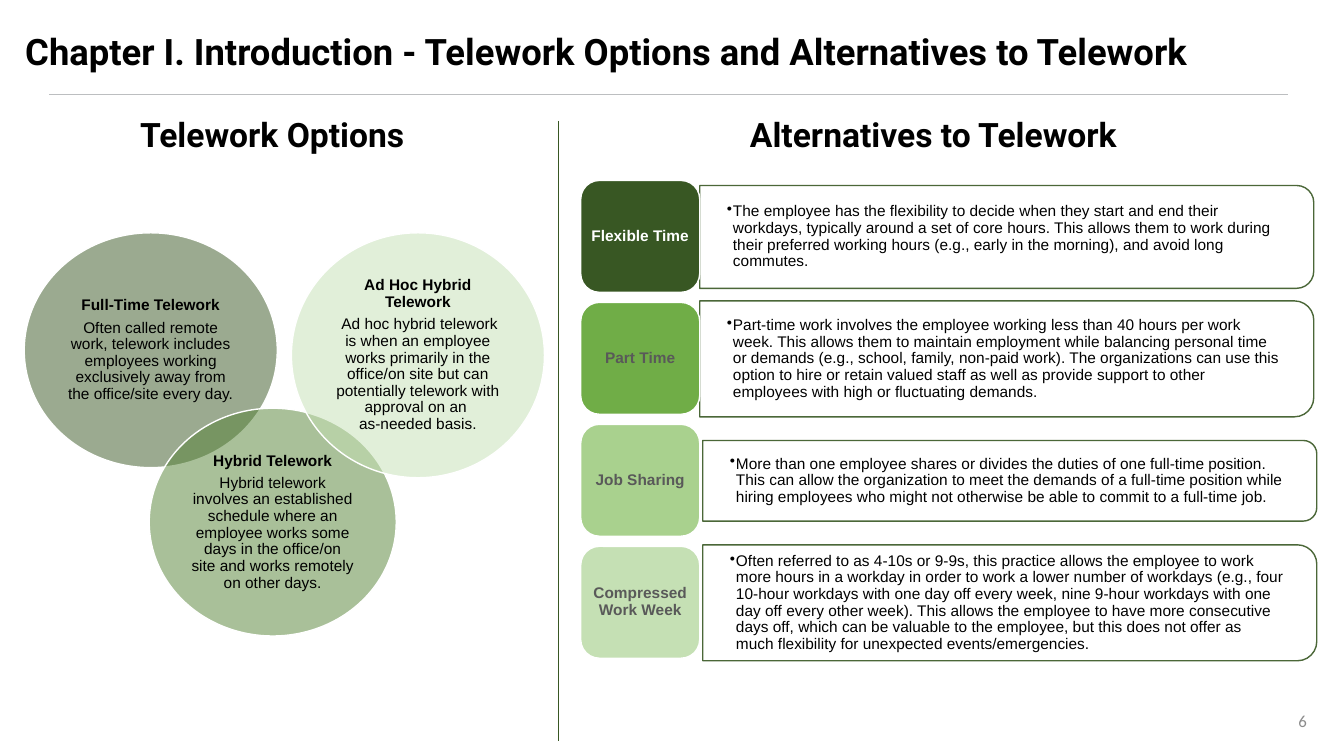
from copy import deepcopy

from lxml import etree
from pptx import Presentation
from pptx.dml.color import RGBColor
from pptx.enum import shapes, text
from pptx.oxml.ns import qn
from pptx.util import Inches, Pt

KIND = shapes.MSO_SHAPE
ALIGN = text.PP_ALIGN
MID = text.MSO_ANCHOR.MIDDLE
HEAD = {"name": "Roboto", "bold": True}
BODY = {"name": "Arial", "size": Pt(11)}
BOLD = {**BODY, "bold": True}
TIGHT = {"line_spacing": 0.9, "space_after": Pt(4), "alignment": ALIGN.CENTER}
POINT = {"line_spacing": 0.9, "space_after": Pt(2), "level": 1}

CIRCLES = [
    (0.24, 2.31, 2.51, 2.33, "385723", "Full-Time Telework",
     "Often called remote work, telework includes employees working "
     "exclusively away from the office/site every day."),
    (1.48, 4.05, 2.45, 2.26, "548235", "Hybrid Telework",
     "Hybrid telework involves an established schedule where an employee "
     "works some days in the office/on site and works remotely on other days."),
    (2.89, 2.31, 2.51, 2.43, "C5E0B4", "Ad Hoc Hybrid Telework",
     " Ad hoc hybrid telework is when an employee works primarily in the "
     "office/on site but can potentially telework with approval on an "
     "\vas-needed basis."),
]

ROWS = [
    ("Flexible Time", "385723", "FFFFFF", 6.94, 1.02,
     "The employee has the flexibility to decide when they start and end "
     "their workdays, typically around a set of core hours. This allows them "
     "to work during their preferred working hours (e.g., early in the "
     "morning), and avoid long commutes."),
    ("Part Time", "70AD47", "595959", 6.94, 1.15,
     "Part-time work involves the employee working less than 40 hours per "
     "work week. This allows them to maintain employment while balancing "
     "personal time or demands (e.g., school, family, non-paid work). The "
     "organizations can use this option to hire or retain valued staff as "
     "well as provide support to other employees with high or fluctuating "
     "demands."),
    ("Job Sharing", "A9D18E", "595959", 6.97, 0.8,
     "More than one employee shares or divides the duties of one full-time "
     "position. This can allow the organization to meet the demands of a "
     "full-time position while hiring employees who might not otherwise be "
     "able to commit to a full-time job."),
    ("Compressed Work Week", "C5E0B4", "595959", 6.97, 1.15,
     "Often referred to as 4-10s or 9-9s, this practice allows the employee "
     "to work more hours in a workday in order to work a lower number of "
     "workdays (e.g., four 10-hour workdays with one day off every week, nine "
     "9-hour workdays with one day off every other week). This allows the "
     "employee to have more consecutive days off, which can be valuable to "
     "the employee, but this does not offer as much flexibility for "
     "unexpected events/emergencies."),
]


def paint(fmt, color, alpha=100):
    """Give a fill a solid colour with an opacity in percent."""
    fmt.solid()
    fmt.fore_color.rgb = RGBColor.from_string(color)
    if alpha < 100:
        tint = fmt._xPr.find(qn("a:solidFill"))[0]
        etree.SubElement(tint, qn("a:alpha"), val=str(alpha * 1000))


def apply(item, values):
    """Set every attribute named in a dict of format values."""
    for name, value in values.items():
        setattr(item, name, value)


def frame(shape, pad=(0.1, 0.05), **values):
    """Set wrap, side and top margins, and further frame values."""
    side, top = map(Inches, pad)
    apply(shape.text_frame, {
        "word_wrap": True, "margin_left": side, "margin_right": side,
        "margin_top": top, "margin_bottom": top, **values})


def write(par, words, font, color="000000", **values):
    """Fill a paragraph with words in one font and colour."""
    par.text = words
    apply(par, values)
    for run in par.runs:
        apply(run.font, font)
        paint(run.font.fill, color)
    for gap in par._p.findall(qn("a:br")):
        gap.append(deepcopy(par.runs[0]._r.rPr))


def label(slide, box, words, font, color="000000", pad=(0.1, 0.05),
          anchor=None, **values):
    """Add a text box with one paragraph and return the paragraph."""
    shape = slide.shapes.add_textbox(*map(Inches, box))
    frame(shape, pad, vertical_anchor=anchor)
    par = shape.text_frame.paragraphs[0]
    write(par, words, font, color, **values)
    return par


def block(slide, kind, box, fill, alpha, line, edge=100):
    """Add a filled and outlined preset shape."""
    shape = slide.shapes.add_shape(kind, *map(Inches, box))
    shape.shadow.inherit = False
    paint(shape.fill, fill, alpha)
    paint(shape.line.fill, line, edge)
    shape.line.width = Pt(1)
    return shape


def rule(slide, ends, color):
    """Add a thin straight line."""
    line = slide.shapes.add_connector(
        shapes.MSO_CONNECTOR.STRAIGHT, *map(Inches, ends))
    paint(line.line.fill, color)
    line.line.width = Pt(0.5)
    etree.SubElement(line._element.spPr, qn("a:effectLst"))


def circle(slide, left, top, wide, high, color, name, words):
    """Add a see-through circle with a heading and a description."""
    shape = block(slide, KIND.OVAL, (left, top, wide, high), color, 50, "FFFFFF")
    frame(shape, (0.05, 0.05), vertical_anchor=MID)
    write(shape.text_frame.paragraphs[0], name, BOLD, **TIGHT)
    write(shape.text_frame.add_paragraph(), words, BODY, **TIGHT)


def option(slide, mid, name, color, ink, left, high, words):
    """Add one row: a panel with a bulleted text and a name tile."""
    wide = 6.09
    turned = (left + (wide - high) / 2, mid - wide / 2, high, wide)
    panel = block(slide, KIND.ROUND_2_SAME_RECTANGLE, turned,
                  "FFFFFF", 90, "385723", 90)
    panel.rotation = 90
    par = label(slide, (left, mid - high / 2, 6.04, high), words, BODY,
                pad=(0.27, 0.05), anchor=MID, **POINT)
    props = par._p.get_or_add_pPr()
    props.set("marL", str(Inches(0.06)))
    props.set("indent", str(Inches(-0.06)))
    etree.SubElement(props, qn("a:buChar"), char="•")
    tile = block(slide, KIND.ROUNDED_RECTANGLE, (5.76, mid - 0.56, 1.18, 1.11),
                 color, 100, "FFFFFF")
    frame(tile, (0.05, 0.02), vertical_anchor=MID)
    write(tile.text_frame.paragraphs[0], name, BOLD, ink, **TIGHT)


def main():
    """Build the slide and save it."""
    deck = Presentation()
    deck.slide_width, deck.slide_height = Inches(13.33), Inches(7.5)
    slide = deck.slides.add_slide(deck.slide_layouts[5])
    title = slide.shapes.title
    spot = zip(("left", "top", "width", "height"),
               map(Inches, (0.15, 0.12, 13.18, 0.82)))
    apply(title, dict(spot))
    frame(title, vertical_anchor=MID, auto_size=text.MSO_AUTO_SIZE.NONE)
    write(title.text_frame.paragraphs[0],
          "Chapter I. Introduction - Telework Options and Alternatives to Telework",
          {**HEAD, "size": Pt(26)}, alignment=ALIGN.LEFT, line_spacing=0.9)
    label(slide, (10.42, 6.95, 2.64, 0.4), "6",
          {"name": "Calibri", "size": Pt(12)}, "8C8C8C",
          anchor=MID, alignment=ALIGN.RIGHT)
    rule(slide, (0.49, 0.94, 12.77, 0.94), "BCBEC0")
    rule(slide, (5.54, 1.2, 5.54, 7.35), "385723")
    for left, wide, words in ((1.29, 3.09, "Telework Options"),
                              (7.34, 4.16, "Alternatives to Telework")):
        label(slide, (left, 1.08, wide, 0.5), words, {**HEAD, "size": Pt(24)})
    for item in CIRCLES:
        circle(slide, *item)
    for step, row in enumerate(ROWS):
        option(slide, 2.35 + 1.21 * step, *row)
    deck.save("out.pptx")


if __name__ == "__main__":
    main()
